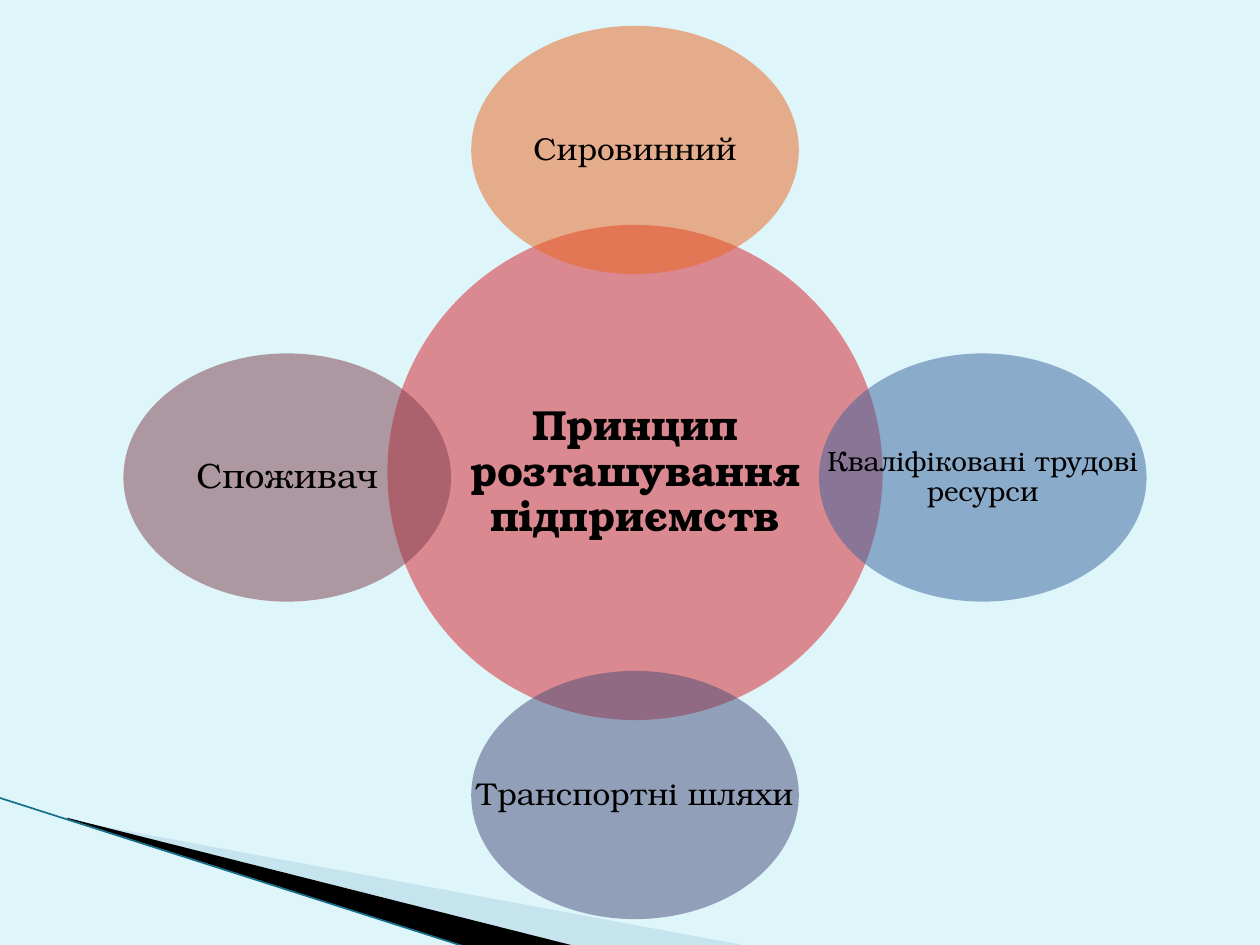
import pptx
import pptx.dml.color
import pptx.enum.shapes
import pptx.enum.text
import pptx.oxml.ns
import pptx.oxml.xmlchemy
import pptx.util
from pptx.util import Inches

COLOURS = {
    "background": "DEF5FA", "pale_wedge": "A0CBDC", "black": "000000",
    "edge": "16708C", "hub": "DA1F28", "top": "EB641B",
    "right": "39639D", "bottom": "474B78", "left": "7D3C4A",
}
FONT = "TeX Gyre Bonum"


def rgb(name):
    return pptx.dml.color.RGBColor.from_string(COLOURS[name])


def paint(shape, name, opacity=100):
    """Give a shape a plain fill of the given opacity in percent, without line or shadow."""
    shape.shadow.inherit = False
    shape.line.fill.background()
    shape.fill.solid()
    shape.fill.fore_color.rgb = rgb(name)
    if opacity < 100:
        colour = shape._element.spPr.find(".//" + pptx.oxml.ns.qn("a:srgbClr"))
        alpha = pptx.oxml.xmlchemy.OxmlElement("a:alpha")
        alpha.set("val", str(opacity * 1000))
        colour.append(alpha)


presentation = pptx.Presentation()
presentation.slide_width = Inches(10)
presentation.slide_height = Inches(7.5)
slide = presentation.slides.add_slide(presentation.slide_layouts[6])
slide.background.fill.solid()
slide.background.fill.fore_color.rgb = rgb("background")

# Corner decoration
wedges = [
    ("pale_wedge", 40, [(0.55, 6.51), (5.95, 7.51), (4.56, 7.51), (0.55, 6.5)]),
    ("black", 100, [(0.53, 6.49), (4.57, 7.51), (3.72, 7.52), (0.54, 6.5)]),
]
for name, opacity, points in wedges:
    corners = [(Inches(x), Inches(y)) for x, y in points]
    builder = slide.shapes.build_freeform(*corners[0])
    builder.add_line_segments(corners[1:], close=True)
    paint(builder.convert_to_shape(), name, opacity)

edge = slide.shapes.add_connector(
    pptx.enum.shapes.MSO_CONNECTOR.STRAIGHT,
    Inches(-0.01), Inches(6.33), Inches(3.71), Inches(7.52))
edge.line.color.rgb = rgb("edge")
edge.line.width = pptx.util.Pt(0.95)
edge._element.spPr.append(pptx.oxml.xmlchemy.OxmlElement("a:effectLst"))

# Hub and four satellites: colour, centre, size, label, text size, bold
HUB_SIZE = (3.93, 3.93)
SATELLITE_SIZE = (2.6, 1.97)
circles = [
    ("hub", (5.04, 3.75), HUB_SIZE, "Принцип розташування підприємств", 24, True),
    ("top", (5.04, 1.19), SATELLITE_SIZE, "Сировинний", 18, False),
    ("right", (7.8, 3.79), SATELLITE_SIZE, "Кваліфіковані трудові ресурси", 16, False),
    ("bottom", (5.04, 6.31), SATELLITE_SIZE, "Транспортні шляхи", 18, False),
    ("left", (2.28, 3.79), SATELLITE_SIZE, "Споживач", 20, False),
]
# Labels use the full width of their ellipse, so they sit in text boxes
label_format = {
    "margin_left": Inches(0.03), "margin_right": Inches(0.03),
    "margin_top": Inches(0.03), "margin_bottom": Inches(0.03),
    "word_wrap": True,
    "vertical_anchor": pptx.enum.text.MSO_ANCHOR.MIDDLE,
}
for name, (centre_x, centre_y), (width, height), text, size, bold in circles:
    box = [Inches(value) for value in
           (centre_x - width / 2, centre_y - height / 2, width, height)]
    ellipse = slide.shapes.add_shape(pptx.enum.shapes.MSO_SHAPE.OVAL, *box)
    paint(ellipse, name, 50)

    label = slide.shapes.add_textbox(*box)
    for attribute, value in label_format.items():
        setattr(label.text_frame, attribute, value)
    paragraph = label.text_frame.paragraphs[0]
    paragraph.text = text
    paragraph.alignment = pptx.enum.text.PP_ALIGN.CENTER
    paragraph.line_spacing = 0.9
    run_font = paragraph.runs[0].font
    run_format = {"name": FONT, "size": pptx.util.Pt(size), "bold": bold}
    for attribute, value in run_format.items():
        setattr(run_font, attribute, value)
    run_font.color.rgb = rgb("black")

presentation.save("out.pptx")
